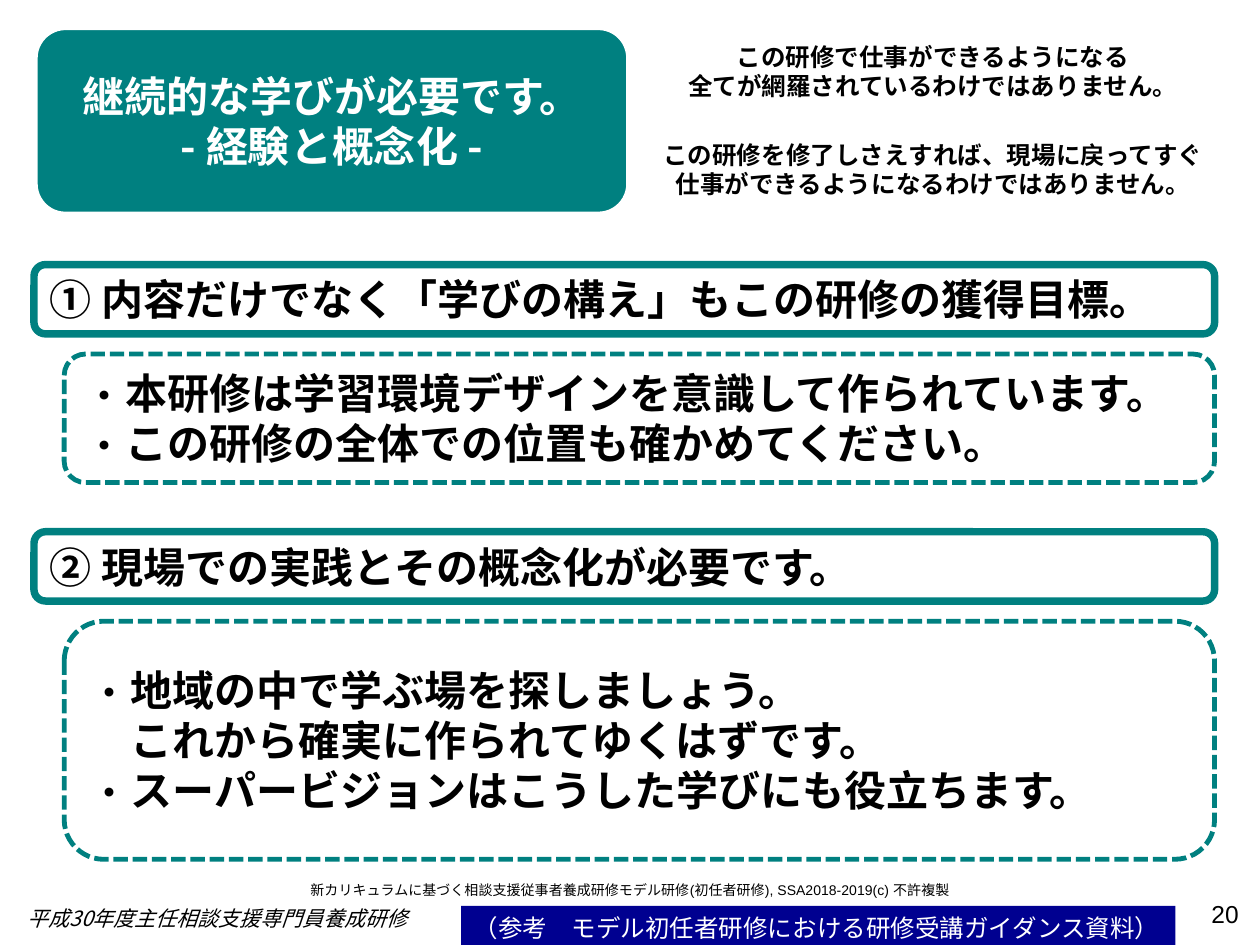
from dataclasses import dataclass
from typing import Optional

from lxml.etree import SubElement
from pptx import Presentation
from pptx.dml.color import RGBColor
from pptx.enum.dml import MSO_LINE_DASH_STYLE as Dash
from pptx.enum.shapes import MSO_SHAPE as Shape
from pptx.enum.text import MSO_ANCHOR as Anchor, MSO_AUTO_SIZE as AutoSize, PP_ALIGN as Align
from pptx.oxml.ns import qn
from pptx.util import Inches, Pt

TEAL = RGBColor(0x00, 0x80, 0x80)
NAVY = RGBColor(0x00, 0x00, 0x90)
WHITE = RGBColor(0xFF, 0xFF, 0xFF)
BLACK = RGBColor(0x00, 0x00, 0x00)
JP_FONT = "Noto Sans CJK JP"
COLUMNS, ROWS = 100, 75
LINE_RATIO = 1.19

prs = Presentation()
prs.slide_width, prs.slide_height = Inches(10), Inches(7.5)
COLUMN, ROW = prs.slide_width / COLUMNS, prs.slide_height / ROWS


@dataclass(frozen=True)
class Box:
    """A place on the slide, in grid columns and rows."""
    left: float
    top: float
    width: float
    height: float

    def emu(self) -> tuple:
        return (round(self.left * COLUMN), round(self.top * ROW),
                round(self.width * COLUMN), round(self.height * ROW))

    def inset(self) -> "Box":
        """The text area inside a rounded rectangle's corners."""
        d = 0.0488 * min(self.width, self.height)
        return Box(self.left + d, self.top + d, self.width - 2 * d, self.height - 2 * d)


@dataclass(frozen=True)
class TextStyle:
    size: float
    color: RGBColor = BLACK
    bold: bool = False
    italic: bool = False
    latin: str = JP_FONT
    align: Align = Align.LEFT


@dataclass(frozen=True)
class Panel:
    box: Box
    line: Optional[RGBColor] = None
    weight: float = 4.25
    fill: Optional[RGBColor] = None
    dash: Optional[Dash] = None
    shape: Shape = Shape.ROUNDED_RECTANGLE


@dataclass(frozen=True)
class Section:
    top: float
    heading: str
    list_height: float
    items: tuple


TITLE = TextStyle(24, WHITE, bold=True, align=Align.CENTER)
BODY = TextStyle(24, bold=True)
NOTE = TextStyle(14, bold=True, align=Align.CENTER)
TITLE_BOX = Box(2.7, 2.1, 47.3, 15)

SECTIONS = (
    Section(21, "① 内容だけでなく「学びの構え」もこの研修の獲得目標。", 10.2,
            ("本研修は学習環境デザインを意識して作られています。",
             "この研修の全体での位置も確かめてください。")),
    Section(42.2, "② 現場での実践とその概念化が必要です。", 18.9,
            ("地域の中で学ぶ場を探しましょう。\vこれから確実に作られてゆくはずです。",
             "スーパービジョンはこうした学びにも役立ちます。")),
)
NOTES = (
    (2.1, ("この研修で仕事ができるようになる", "全てが網羅されているわけではありません。")),
    (9.9, ("この研修を修了しさえすれば、現場に戻ってすぐ仕事ができるようになるわけではありません。",)),
)
FOOTERS = (
    (Box(0, 69.5, 100, 4), "新カリキュラムに基づく相談支援従事者養成研修モデル研修(初任者研修), SSA2018-2019(c) 不許複製",
     TextStyle(8, latin="Arial", align=Align.CENTER)),
    (Box(76, 70.9, 23.3, 5.2), "20", TextStyle(14, latin="Arial", align=Align.RIGHT)),
    (Box(1.2, 71.4, 39.4, 3), "平成30年度主任相談支援専門員養成研修", TextStyle(12, italic=True)),
)


def write(s, lines: tuple, style: TextStyle, anchor: Anchor = Anchor.MIDDLE) -> None:
    tf = s.text_frame
    frame = dict(word_wrap=True, auto_size=AutoSize.NONE, vertical_anchor=anchor)
    for name, value in frame.items():
        setattr(tf, name, value)
    spacing = dict(alignment=style.align, space_before=Pt(0), space_after=Pt(0),
                   line_spacing=Pt(round(style.size * LINE_RATIO, 1)))
    font = dict(size=Pt(style.size), bold=style.bold, italic=style.italic, name=style.latin)
    for i, line in enumerate(lines):
        p = tf.paragraphs[0] if i == 0 else tf.add_paragraph()
        p.text = line
        for name, value in spacing.items():
            setattr(p, name, value)
        for r in p.runs:
            for name, value in font.items():
                setattr(r.font, name, value)
            r.font.color.rgb = style.color
            SubElement(r.font._element, qn("a:ea"), typeface=JP_FONT)


def add_bullets(s, size: float) -> None:
    """Hang each paragraph one character deep behind a middle dot."""
    for p in s.text_frame.paragraphs:
        pPr = p._p.get_or_add_pPr()
        pPr.set("marL", str(Pt(size)))
        pPr.set("indent", str(-Pt(size)))
        SubElement(pPr, qn("a:buFont"), typeface=JP_FONT)
        SubElement(pPr, qn("a:buChar"), char="・")


def draw_panel(slide, panel: Panel):
    s = slide.shapes.add_shape(panel.shape, *panel.box.emu())
    s.shadow.inherit = False
    for part, color in ((s.fill, panel.fill), (s.line.fill, panel.line)):
        if color is None:
            part.background()
        else:
            part.solid()
            part.fore_color.rgb = color
    if panel.line is not None:
        s.line.width = Pt(panel.weight)
    if panel.dash is not None:
        s.line.dash_style = panel.dash
    return s


def place(slide, placeholder, box: Box) -> None:
    """Move a placeholder to its box, in front of what is drawn so far."""
    placeholder.left, placeholder.top, placeholder.width, placeholder.height = box.emu()
    slide.shapes._spTree.append(placeholder._element)


def draw_section(slide, section: Section, body) -> None:
    heading = draw_panel(slide, Panel(Box(2.7, section.top, 93.7, 5.5), TEAL, fill=WHITE))
    write(heading, (section.heading,), BODY)
    box = Box(5.1, section.top + 7.1, 91.3, section.list_height)
    draw_panel(slide, Panel(box, TEAL, 2.75, dash=Dash.SQUARE_DOT))
    place(slide, body, box.inset())
    write(body, section.items, BODY)
    add_bullets(body, BODY.size)


def main() -> None:
    slide = prs.slides.add_slide(prs.slide_layouts.get_by_name("Two Content"))
    title, *bodies = [s for s in slide.placeholders if s.placeholder_format.idx < 3]

    for section, body in zip(SECTIONS, bodies):
        draw_section(slide, section, body)

    draw_panel(slide, Panel(TITLE_BOX, WHITE, fill=TEAL))
    place(slide, title, TITLE_BOX.inset())
    write(title, ("継続的な学びが必要です。", "- 経験と概念化 -"), TITLE)

    for top, lines in NOTES:
        write(draw_panel(slide, Panel(Box(50.8, top, 46.5, 7.1), WHITE)), lines, NOTE)

    for box, text, style in FOOTERS:
        write(slide.shapes.add_textbox(*box.emu()), (text,), style, Anchor.TOP)

    source = draw_panel(slide, Panel(Box(36.6, 71.9, 56.7, 3.4), fill=NAVY, shape=Shape.RECTANGLE))
    source.text_frame.margin_right = 0
    write(source, ("（参考　モデル初任者研修における研修受講ガイダンス資料）",), TextStyle(14, WHITE))

    prs.save("out.pptx")


if __name__ == "__main__":
    main()
